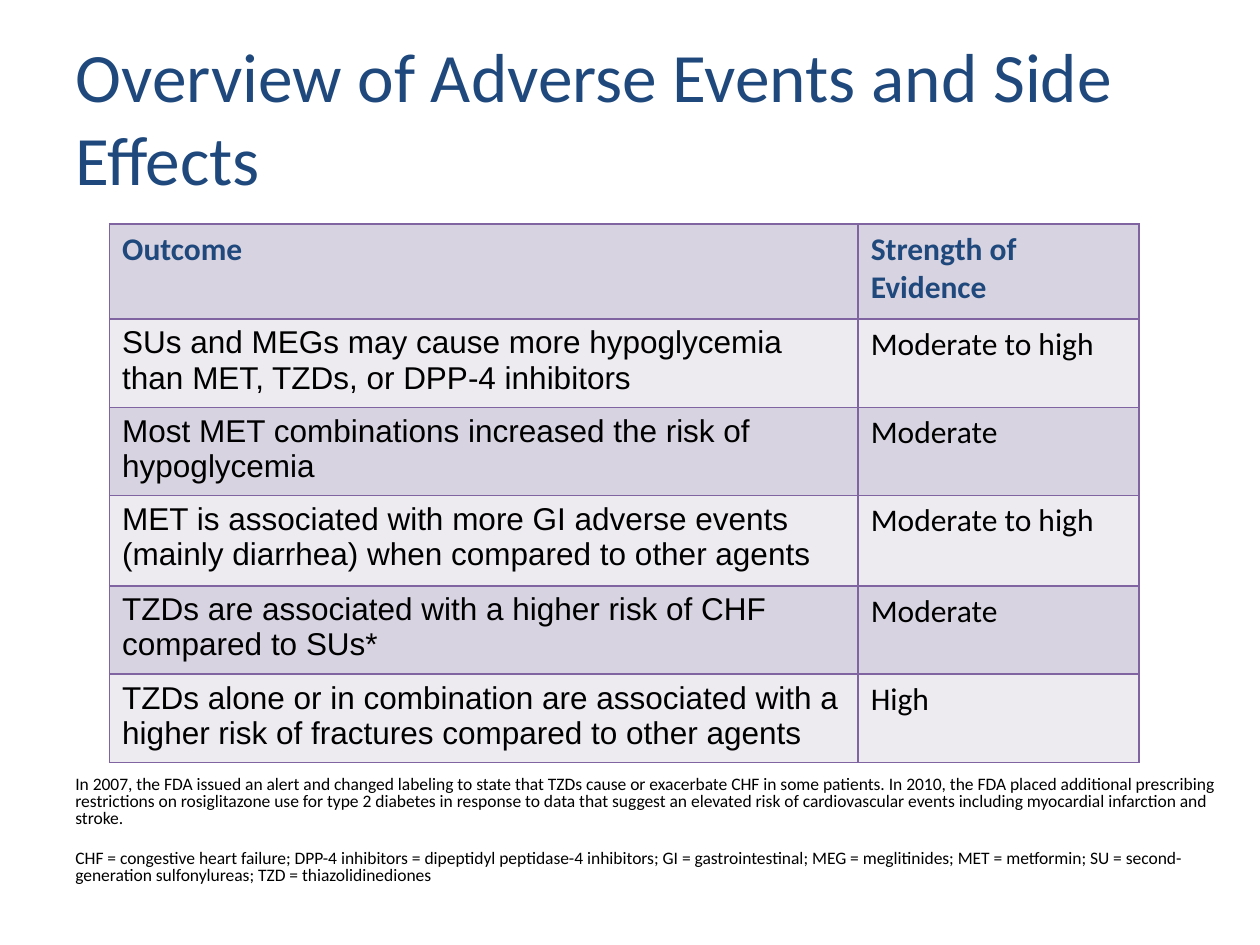
from lxml import etree
from pptx import Presentation
from pptx.dml.color import RGBColor
from pptx.enum import text
from pptx.oxml import ns
from pptx.util import Cm, Pt

NAVY = RGBColor(0x1F, 0x49, 0x7D)
BLACK = RGBColor(0x00, 0x00, 0x00)
PURPLE = RGBColor(0x80, 0x64, 0xA2)
BANDS = (RGBColor(0xD8, 0xD3, 0xE0), RGBColor(0xED, 0xEA, 0xF0))

TITLE_FONT = {"name": "Calibri", "size": Pt(39.6), "color": NAVY}
HEAD_FONT = {"name": "Calibri", "size": Pt(18), "bold": True, "color": NAVY}
OUTCOME_FONT = {"name": "Arial", "size": Pt(18), "bold": False, "color": BLACK}
STRENGTH_FONT = {**OUTCOME_FONT, "name": "Calibri"}
NOTE_FONT = {"name": "Calibri", "size": Pt(10), "color": BLACK}

ROWS = [
    ("Outcome", "Strength of Evidence"),
    ("SUs and MEGs may cause more hypoglycemia than MET, TZDs, or DPP-4 inhibitors",
     "Moderate to high"),
    ("Most MET combinations increased the risk of hypoglycemia", "Moderate"),
    ("MET is associated with more GI adverse events (mainly diarrhea) when compared "
     "to other agents", "Moderate to high"),
    ("TZDs are associated with a higher risk of CHF compared to SUs*", "Moderate"),
    ("TZDs alone or in combination are associated with a higher risk of fractures "
     "compared to other agents", "High"),
]
COL_WIDTHS = (15.09, 5.66)
ROW_HEIGHTS = (1.91, 1.78, 1.78, 1.82, 1.78, 1.78)
NOTES = [
    "In 2007, the FDA issued an alert and changed labeling to state that TZDs cause or "
    "exacerbate CHF in some patients. In 2010, the FDA placed additional prescribing "
    "restrictions on rosiglitazone use for type 2 diabetes in response to data that suggest "
    "an elevated risk of cardiovascular events including myocardial infarction and stroke.",
    "CHF = congestive heart failure; DPP-4 inhibitors = dipeptidyl peptidase-4 inhibitors; "
    "GI = gastrointestinal; MEG = meglitinides; MET = metformin; SU = second-generation "
    "sulfonylureas; TZD = thiazolidinediones",
]


def set_font(p, fmt):
    """Apply a dict of font values to every run of a paragraph."""
    for r in p.runs:
        for key, value in fmt.items():
            if key == "color":
                r.font.color.rgb = value
            else:
                setattr(r.font, key, value)


def set_borders(cell, color, width):
    """Draw the four borders of a table cell."""
    tc_pr = cell._tc.get_or_add_tcPr()
    for side in ("lnL", "lnR", "lnT", "lnB"):
        ln = etree.SubElement(tc_pr, ns.qn(f"a:{side}"), w=str(width))
        fill = etree.SubElement(ln, ns.qn("a:solidFill"))
        etree.SubElement(fill, ns.qn("a:srgbClr"), val=str(color))


def add_title(s, left, top, width, height):
    """Place and format the title placeholder."""
    sp = s.shapes.title
    sp.left, sp.top, sp.width, sp.height = left, top, width, height
    tf = sp.text_frame
    tf.text = "Overview of Adverse Events and Side Effects"
    tf.auto_size = text.MSO_AUTO_SIZE.NONE
    tf.vertical_anchor = text.MSO_ANCHOR.MIDDLE
    p = tf.paragraphs[0]
    p.alignment = text.PP_ALIGN.LEFT
    set_font(p, TITLE_FONT)


def add_evidence_table(s, left, top, width, height):
    """Add the banded table of outcomes and strength of evidence."""
    tbl = s.shapes.add_table(len(ROWS), len(COL_WIDTHS), left, top, width, height).table
    for col, w in zip(tbl.columns, COL_WIDTHS):
        col.width = Cm(w)
    for i, (row, h) in enumerate(zip(tbl.rows, ROW_HEIGHTS)):
        row.height = Cm(h)
        fonts = (OUTCOME_FONT, STRENGTH_FONT) if i else (HEAD_FONT, HEAD_FONT)
        for cell, words, fmt in zip(row.cells, ROWS[i], fonts):
            cell.text = words
            set_font(cell.text_frame.paragraphs[0], fmt)
            set_borders(cell, PURPLE, Pt(1))
            cell.fill.solid()
            cell.fill.fore_color.rgb = BANDS[i % 2]


def add_notes_text(s, left, top, width, height):
    """Add the footnote and the abbreviations below the table."""
    tf = s.shapes.add_textbox(left, top, width, height).text_frame
    tf.word_wrap = True
    for i, words in enumerate(NOTES):
        p = tf.add_paragraph() if i else tf.paragraphs[0]
        p.text = words
        p.line_spacing = 0.8
        if i:
            p.space_before = Pt(13.7)
        set_font(p, NOTE_FONT)


def main():
    """Build the slide and save it."""
    prs = Presentation()
    prs.slide_width, prs.slide_height = Cm(25.4), Cm(19.05)
    s = prs.slides.add_slide(prs.slide_layouts[5])
    add_title(s, Cm(1.27), Cm(0.76), Cm(22.86), Cm(3.18))
    add_evidence_table(s, Cm(2.21), Cm(4.52), Cm(sum(COL_WIDTHS)), Cm(sum(ROW_HEIGHTS)))
    add_notes_text(s, Cm(1.27), Cm(15.54), Cm(23.7), Cm(2.54))
    prs.save("out.pptx")


if __name__ == "__main__":
    main()
